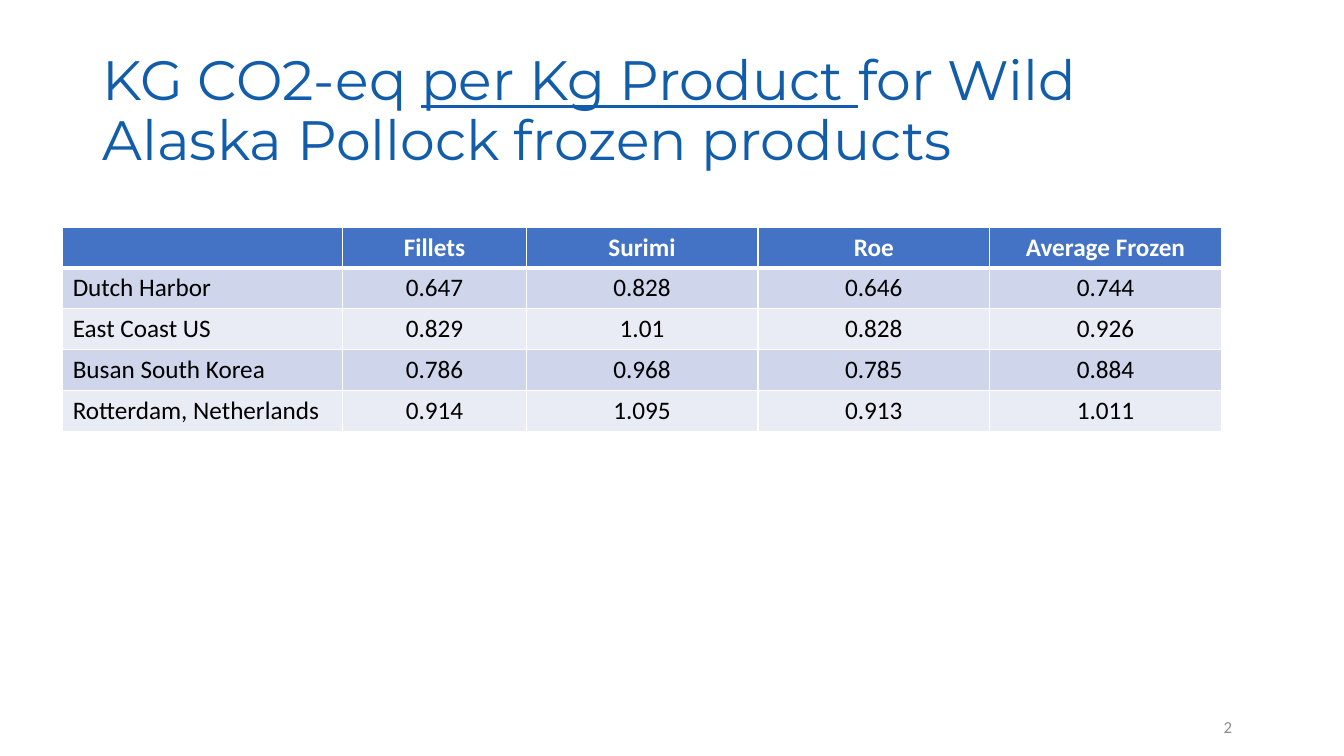
from dataclasses import dataclass

from lxml.etree import SubElement
from pptx import Presentation
from pptx.dml.color import RGBColor
from pptx.enum.text import MSO_ANCHOR as Anchor, MSO_AUTO_SIZE as AutoSize, PP_ALIGN as Align
from pptx.oxml.ns import qn
from pptx.util import Cm, Pt


@dataclass(frozen=True)
class Theme:
    title_font: str = "Montserrat"
    body_font: str = "Calibri"
    title_size: float = 39.6
    table_size: float = 18
    number_size: float = 12
    title_color: str = "125DAA"
    number_color: str = "8C8C8C"
    text_color: str = "000000"
    header_text: str = "FFFFFF"
    header_fill: str = "4472C4"
    band_fills: tuple = ("CFD5EA", "E9EBF5")
    border_color: str = "FFFFFF"
    border_width: float = 1
    header_border_width: float = 3


TITLE_RUNS = [
    ("KG CO2-eq ", False),
    ("per Kg Product ", True),
    ("for Wild Alaska Pollock frozen products", False),
]
EMISSIONS = [
    ("", "Fillets", "Surimi", "Roe", "Average Frozen"),
    ("Dutch Harbor", "0.647", "0.828", "0.646", "0.744"),
    ("East Coast US", "0.829", "1.01", "0.828", "0.926"),
    ("Busan South Korea", "0.786", "0.968", "0.785", "0.884"),
    ("Rotterdam, Netherlands", "0.914", "1.095", "0.913", "1.011"),
]
COLUMN_WIDTHS = (7.06, 4.62, 5.84, 5.84, 5.84)
ROW_HEIGHT = 1.03


class SlideBuilder:
    def __init__(self, slide, theme):
        self.slide = slide
        self.theme = theme

    def add_run(self, paragraph, text, font_name, size, color, bold=False, underline=False):
        run = paragraph.add_run()
        run.text = text
        font = run.font
        font.name, font.size = font_name, Pt(size)
        font.bold, font.underline = bold, underline
        font.color.rgb = RGBColor.from_string(color)

    def set_title(self, runs, left, top, width, height):
        title = self.slide.shapes.title
        title.left, title.top, title.width, title.height = map(Cm, (left, top, width, height))
        frame = title.text_frame
        frame.word_wrap = True
        frame.auto_size = AutoSize.NONE
        frame.vertical_anchor = Anchor.MIDDLE
        paragraph = frame.paragraphs[0]
        paragraph.alignment = Align.LEFT
        paragraph.line_spacing = 0.9
        for text, underline in runs:
            self.add_run(paragraph, text, self.theme.title_font, self.theme.title_size,
                         self.theme.title_color, underline=underline)

    def set_borders(self, cell, row_index):
        """Draw all four cell edges, with a heavier rule below the header row."""
        theme = self.theme
        properties = cell._tc.get_or_add_tcPr()
        heavy_edge = {0: "lnB", 1: "lnT"}.get(row_index)
        for edge in ("lnL", "lnR", "lnT", "lnB"):
            width = theme.header_border_width if edge == heavy_edge else theme.border_width
            line = SubElement(properties, qn(f"a:{edge}"), w=str(Pt(width)))
            fill = SubElement(line, qn("a:solidFill"))
            SubElement(fill, qn("a:srgbClr"), val=theme.border_color)

    def add_table(self, rows, column_widths, row_height, left, top):
        theme = self.theme
        table = self.slide.shapes.add_table(
            len(rows), len(column_widths), Cm(left), Cm(top),
            Cm(sum(column_widths)), Cm(row_height * len(rows))).table
        for column, width in zip(table.columns, column_widths):
            column.width = Cm(width)
        for row_index, values in enumerate(rows):
            is_header = row_index == 0
            fill_color = theme.header_fill if is_header else theme.band_fills[(row_index - 1) % 2]
            text_color = theme.header_text if is_header else theme.text_color
            table.rows[row_index].height = Cm(row_height)
            for column_index, text in enumerate(values):
                cell = table.cell(row_index, column_index)
                self.set_borders(cell, row_index)
                cell.fill.solid()
                cell.fill.fore_color.rgb = RGBColor.from_string(fill_color)
                paragraph = cell.text_frame.paragraphs[0]
                paragraph.alignment = Align.CENTER if column_index else Align.LEFT
                if text:
                    self.add_run(paragraph, text, theme.body_font, theme.table_size,
                                 text_color, bold=is_header)

    def add_slide_number(self, number, left, top, width, height):
        box = self.slide.shapes.add_textbox(*map(Cm, (left, top, width, height)))
        frame = box.text_frame
        frame.word_wrap = True
        frame.vertical_anchor = Anchor.MIDDLE
        paragraph = frame.paragraphs[0]
        paragraph.alignment = Align.RIGHT
        self.add_run(paragraph, number, self.theme.body_font, self.theme.number_size,
                     self.theme.number_color)


def main():
    presentation = Presentation()
    presentation.slide_width, presentation.slide_height = Cm(33.87), Cm(19.05)
    title_only = presentation.slide_layouts[5]
    builder = SlideBuilder(presentation.slides.add_slide(title_only), Theme())
    builder.set_title(TITLE_RUNS, 2.33, 1, 29.21, 3.68)
    builder.add_table(EMISSIONS, COLUMN_WIDTHS, ROW_HEIGHT, 1.58, 5.72)
    builder.add_slide_number("2", 28.58, 17.81, 2.72, 1.02)
    presentation.save("out.pptx")


if __name__ == "__main__":
    main()
